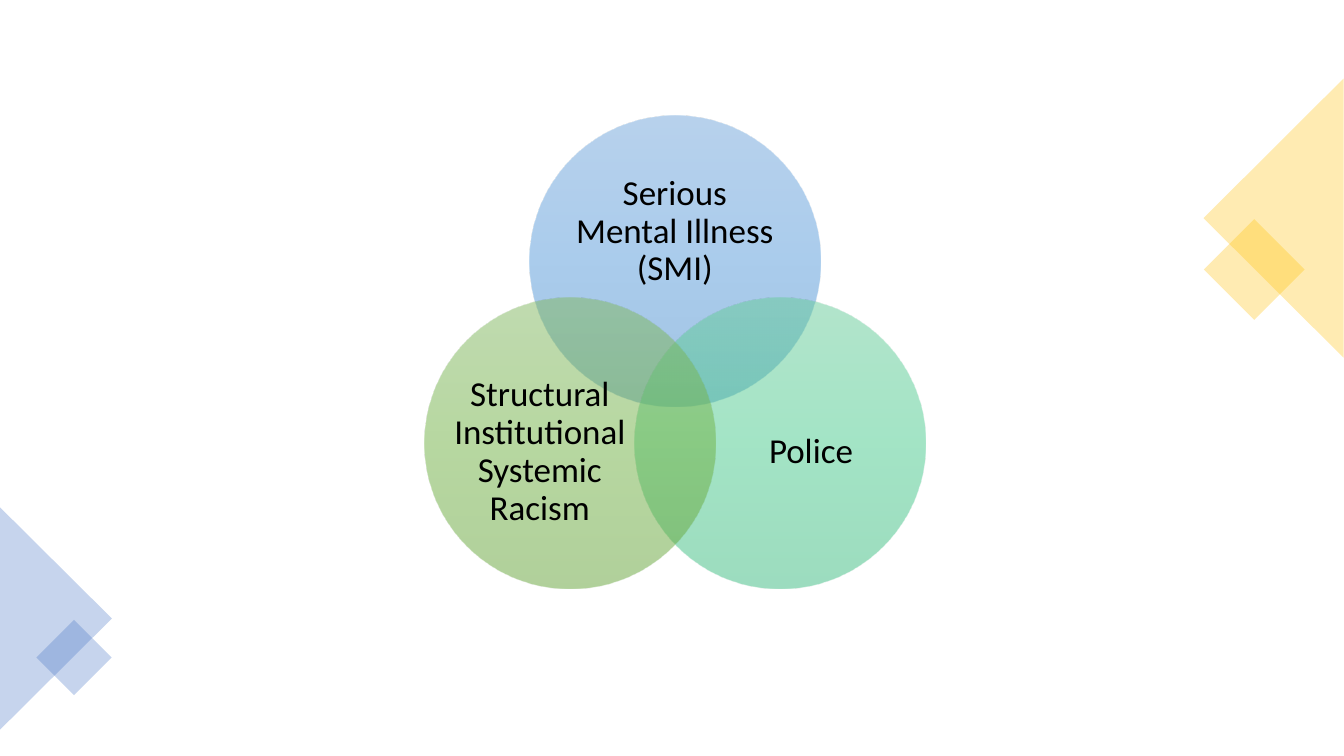
from copy import deepcopy
from math import cos, radians, sin

from lxml.etree import SubElement
from pptx import Presentation
from pptx.dml.color import RGBColor
from pptx.enum.shapes import MSO_SHAPE
from pptx.enum.text import MSO_ANCHOR, PP_ALIGN
from pptx.oxml.ns import qn
from pptx.util import Pt

THEME = {
    "gold": "FFC000",
    "navy": "4472C4",
    "blue": ("71A6DB", "559BDB", "448ACA"),
    "mint": ("67CC9A", "47CB8E", "39BB7F"),
    "green": ("81B861", "6FB242", "62A336"),
    "font": {"name": "Calibri", "size": Pt(25)},
    "text": RGBColor(0, 0, 0),
    "frame": {"word_wrap": True, "vertical_anchor": MSO_ANCHOR.MIDDLE,
              "margin_left": 0, "margin_top": 0,
              "margin_right": 0, "margin_bottom": 0},
    "paragraph": {"alignment": PP_ALIGN.CENTER, "line_spacing": 0.9},
}

prs = Presentation()
prs.slide_width, prs.slide_height = Pt(960), Pt(540)
s = prs.slides.add_slide(prs.slide_layouts[6])


def add_glass(kind, box, colors, opacity, rotation=0):
    """Add a see-through shape with a flat or top-to-bottom gradient fill."""
    sp = s.shapes.add_shape(kind, *map(Pt, box))
    sp.shadow.inherit = False
    sp.line.fill.background()
    sp.rotation = rotation
    spPr = sp._element.spPr
    if len(colors) == 1:
        sp.fill.solid()
        sp.fill.fore_color.rgb = RGBColor.from_string(colors[0])
    else:
        sp.fill.gradient()
        sp.fill.gradient_angle = 270
        stops = spPr.find(".//" + qn("a:gsLst"))
        stops.append(deepcopy(stops[0]))
        for i, (stop, color) in enumerate(zip(sp.fill.gradient_stops, colors)):
            stop.position = i / (len(colors) - 1)
            stop.color.rgb = RGBColor.from_string(color)
    for clr in spPr.iter(qn("a:srgbClr")):
        SubElement(clr, qn("a:alpha"), val=str(opacity * 1000))


def set_all(obj, values):
    for name, value in values.items():
        setattr(obj, name, value)


# Corner decorations
for kind, box, color, rotation in (
    (MSO_SHAPE.RECTANGLE, (870.4, 167, 51, 51), "gold", 45),
    (MSO_SHAPE.ISOSCELES_TRIANGLE, (810, 105.8, 199.4, 100), "gold", 270),
    (MSO_SHAPE.ISOSCELES_TRIANGLE, (-39.6, 401.8, 159, 80), "navy", 90),
    (MSO_SHAPE.RECTANGLE, (33.8, 450.7, 38, 38), "navy", 45),
):
    add_glass(kind, box, (THEME[color],), 30, rotation)

# Venn diagram: three circles spaced evenly around a centre
CENTER_X, CENTER_Y, OFFSET, DIAMETER = 482, 273, 86.6, 207.6
for angle, color, label, box in (
    (-90, "blue", "Serious Mental Illness (SMI)", (406, 118.8, 152, 93.6)),
    (30, "mint", "Police", (517, 265.7, 124.6, 114.5)),
    (150, "green", "Structural Institutional Systemic Racism",
     (323.3, 265.7, 124.6, 114.5)),
):
    left = CENTER_X + OFFSET * cos(radians(angle)) - DIAMETER / 2
    top = CENTER_Y + OFFSET * sin(radians(angle)) - DIAMETER / 2
    add_glass(MSO_SHAPE.OVAL, (left, top, DIAMETER, DIAMETER), THEME[color], 50)

    # Circle label
    tf = s.shapes.add_textbox(*map(Pt, box)).text_frame
    set_all(tf, THEME["frame"])
    p = tf.paragraphs[0]
    set_all(p, THEME["paragraph"])
    r = p.add_run()
    r.text = label
    set_all(r.font, THEME["font"])
    r.font.color.rgb = THEME["text"]

prs.save("out.pptx")
